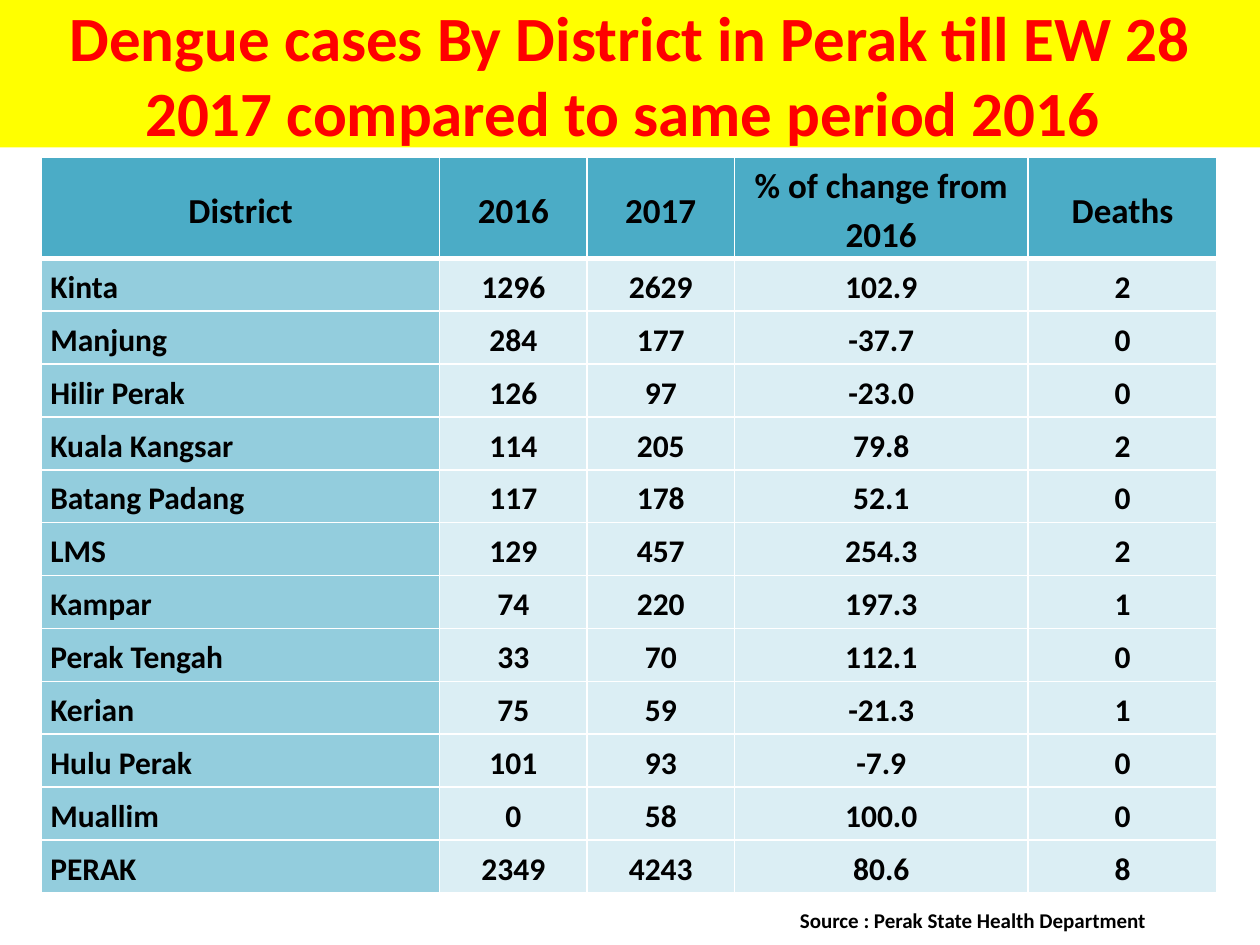
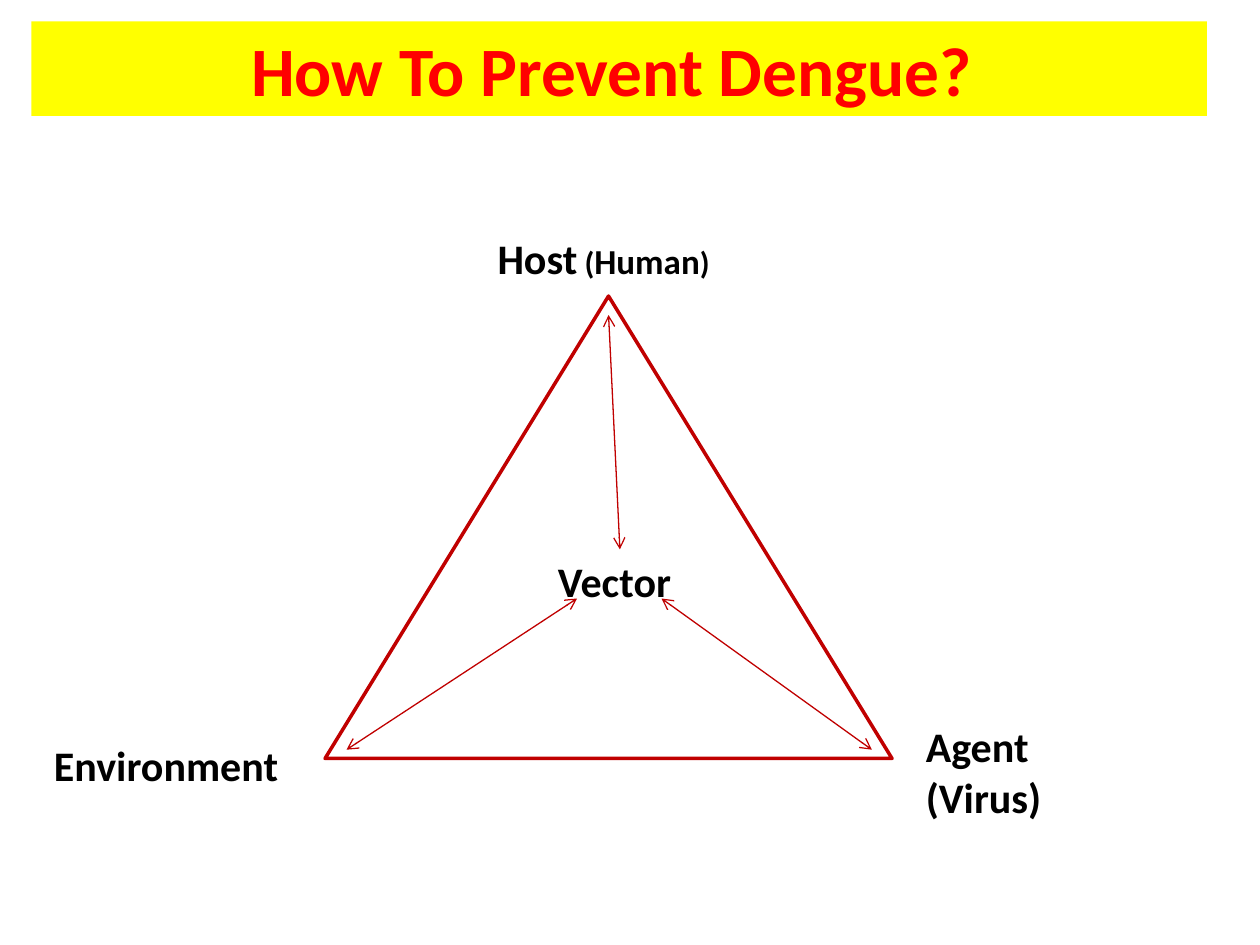
"""Build two slides on dengue: district counts and the prevention triangle."""
import dataclasses

import lxml.etree
import pptx
import pptx.dml.color
import pptx.enum.shapes
import pptx.enum.text
import pptx.oxml.ns
import pptx.util

Inches = pptx.util.Inches
Pt = pptx.util.Pt
Align = pptx.enum.text.PP_ALIGN
Anchor = pptx.enum.text.MSO_ANCHOR
Shape = pptx.enum.shapes.MSO_SHAPE


@dataclasses.dataclass(frozen=True)
class Theme:
    font: str = "Calibri"
    ink: str = "000000"
    band: str = "FFFF00"
    title: str = "FF0000"
    line: str = "C00000"
    grid: str = "FFFFFF"
    head: str = "4BACC6"
    side: str = "93CDDD"
    body: str = "DBEEF4"
    big: float = 36
    huge: float = 39.6
    label: float = 24
    header: float = 20
    cell: float = 18
    note: float = 12


THEME = Theme()

HEADS = ["District", "2016", "2017", "% of change from 2016", "Deaths"]
ROWS = [
    ("Kinta", "1296", "2629", "102.9", "2"),
    ("Manjung", "284", "177", "-37.7", "0"),
    ("Hilir Perak", "126", "97", "-23.0", "0"),
    ("Kuala Kangsar", "114", "205", "79.8", "2"),
    ("Batang Padang", "117", "178", "52.1", "0"),
    ("LMS", "129", "457", "254.3", "2"),
    ("Kampar", "74", "220", "197.3", "1"),
    ("Perak Tengah", "33", "70", "112.1", "0"),
    ("Kerian", "75", "59", "-21.3", "1"),
    ("Hulu Perak", "101", "93", "-7.9", "0"),
    ("Muallim", "0", "58", "100.0", "0"),
    ("PERAK", "2349", "4243", "80.6", "8"),
]
WIDTHS = [3.16, 1.17, 1.17, 2.33, 1.5]


def color(code):
    return pptx.dml.color.RGBColor.from_string(code)


def style(font, size, code=THEME.ink):
    font.name = THEME.font
    font.size = Pt(size)
    font.bold = True
    font.color.rgb = color(code)


def paint(item, code):
    item.fill.solid()
    item.fill.fore_color.rgb = color(code)


def add_sub(parent, tag, **attrs):
    return lxml.etree.SubElement(parent, pptx.oxml.ns.qn(tag), **attrs)


def add_band(slide, text, box, size):
    band = slide.shapes.add_shape(Shape.RECTANGLE, *map(Inches, box))
    band.shadow.inherit = False
    paint(band, THEME.band)
    band.line.fill.background()
    frame = band.text_frame
    frame.word_wrap = True
    frame.vertical_anchor = Anchor.MIDDLE
    para = frame.paragraphs[0]
    para.text = text
    para.alignment = Align.CENTER
    style(para.font, size, THEME.title)


def add_label(slide, lines, box, size=THEME.label):
    """Add a text box; each line is a list of (text, size or None) runs."""
    label = slide.shapes.add_textbox(*map(Inches, box))
    frame = label.text_frame
    frame.word_wrap = True
    frame.auto_size = pptx.enum.text.MSO_AUTO_SIZE.SHAPE_TO_FIT_TEXT
    for i, parts in enumerate(lines):
        para = frame.add_paragraph() if i else frame.paragraphs[0]
        style(para.font, size)
        for text, other in parts:
            run = para.add_run()
            run.text = text
            if other:
                run.font.size = Pt(other)


def add_edges(cell, low):
    props = cell._tc.get_or_add_tcPr()
    for side, width in zip("LRTB", (1, 1, 1, low)):
        edge = add_sub(props, f"a:ln{side}", w=str(Pt(width)))
        fill = add_sub(edge, "a:solidFill")
        add_sub(fill, "a:srgbClr", val=THEME.grid)


def fill_cell(cell, text, row, col):
    head = row == 0
    add_edges(cell, 3 if head else 1)
    paint(cell, THEME.head if head else THEME.body if col else THEME.side)
    cell.margin_left = cell.margin_right = Inches(0.07)
    cell.margin_top = cell.margin_bottom = 0
    cell.vertical_anchor = Anchor.MIDDLE
    para = cell.text_frame.paragraphs[0]
    para.text = text
    para.alignment = Align.CENTER if head or col else Align.LEFT
    para.line_spacing = 1.15
    style(para.font, THEME.header if head else THEME.cell)


def add_grid(slide, rows, box):
    frame = slide.shapes.add_table(len(rows), len(WIDTHS), *map(Inches, box))
    table = frame.table
    for column, width in zip(table.columns, WIDTHS):
        column.width = Inches(width)
    for i, values in enumerate(rows):
        table.rows[i].height = Inches(0.42 if i else 0.8)
        for j, text in enumerate(values):
            fill_cell(table.cell(i, j), text, i, j)


def add_arrow(slide, start, end):
    kind = pptx.enum.shapes.MSO_CONNECTOR.STRAIGHT
    arrow = slide.shapes.add_connector(kind, *map(Inches, start + end))
    arrow.line.color.rgb = color(THEME.line)
    arrow.line.width = Pt(0.75)
    line = arrow.line._get_or_add_ln()
    for tag in ("a:headEnd", "a:tailEnd"):
        add_sub(line, tag, type="arrow")
    add_sub(arrow._element.spPr, "a:effectLst")


def add_peak(slide, box):
    peak = slide.shapes.add_shape(Shape.ISOSCELES_TRIANGLE, *map(Inches, box))
    peak.shadow.inherit = False
    peak.fill.background()
    peak.line.color.rgb = color(THEME.line)
    peak.line.width = Pt(2)


def build_cases(slide):
    title = "Dengue cases By District in Perak till EW 28 2017 compared to same period 2016 "
    add_band(slide, title, (0, 0, 10, 1.17), THEME.big)
    add_grid(slide, [HEADS] + ROWS, (0.33, 1.25, 9.33, 5.83))
    source = "Source : Perak State Health Department"
    add_label(slide, [[(source, None)]], (6.25, 7.15, 3.33, 0.3), THEME.note)


def build_cycle(slide):
    add_peak(slide, (2.58, 2.35, 4.5, 3.67))
    for start, end in [
        ((5.25, 4.75), (6.92, 5.95)),
        ((4.83, 2.5), (4.92, 4.36)),
        ((4.58, 4.75), (2.75, 5.95)),
    ]:
        add_arrow(slide, start, end)
    host = [("Host", None), (" (", 18), ("Human", 20), (")", 18)]
    for lines, box in [
        ([[("Vector", None)]], (4.33, 4.36, 1.17, 0.5)),
        ([host], (3.85, 1.8, 2.12, 0.5)),
        ([[("Environment", None)]], (0.33, 5.82, 2.25, 0.5)),
        ([[("Agent", None)], [("(Virus)", None)]], (7.25, 5.67, 1.17, 0.91)),
    ]:
        add_label(slide, lines, box)
    add_band(slide, "How To Prevent Dengue? ", (0.25, 0.17, 9.33, 0.75), THEME.huge)


def main():
    deck = pptx.Presentation()
    deck.slide_width = Inches(10)
    deck.slide_height = Inches(7.5)
    for build in (build_cases, build_cycle):
        build(deck.slides.add_slide(deck.slide_layouts[6]))
    deck.save("out.pptx")


if __name__ == "__main__":
    main()
